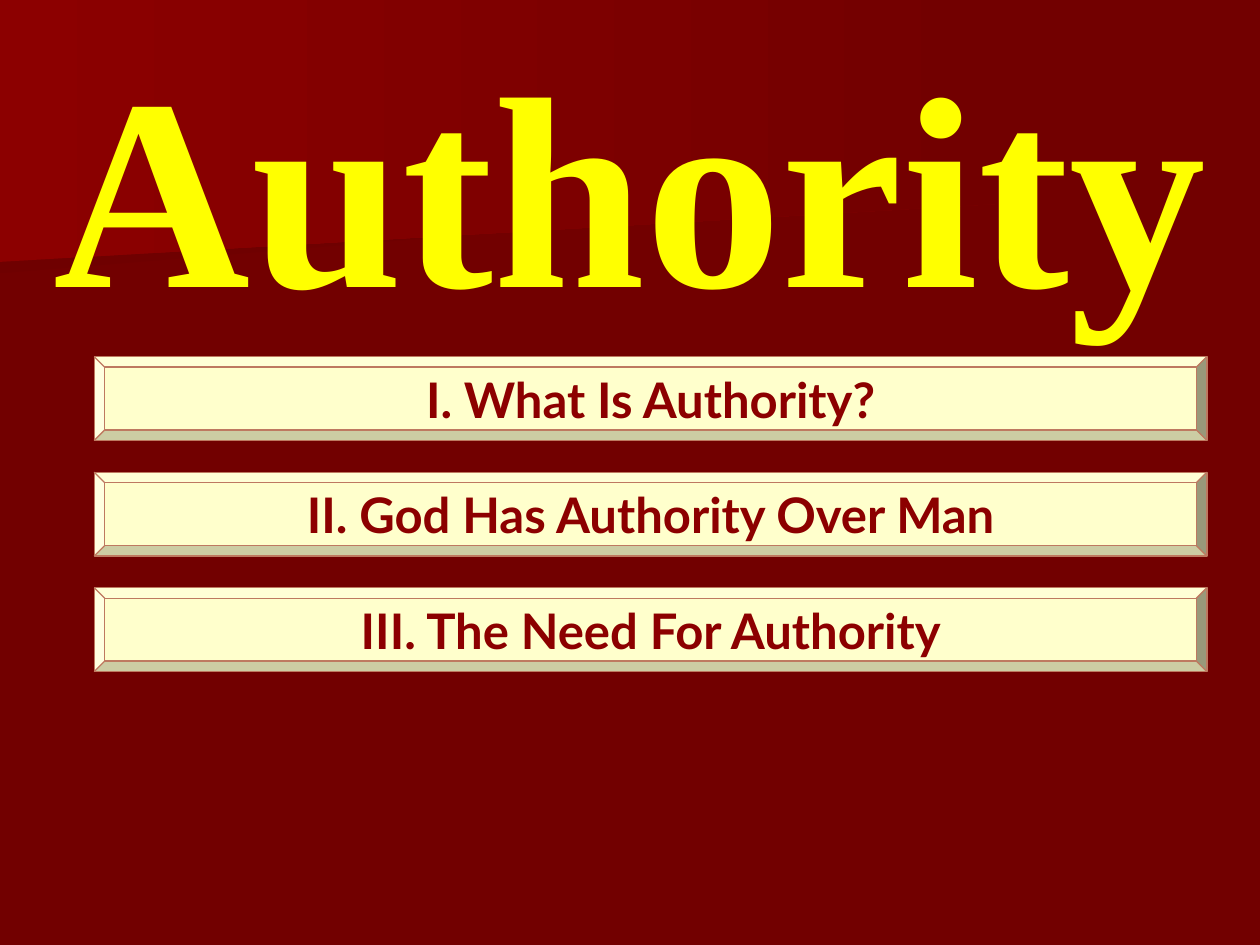
from pptx import Presentation
from pptx.dml.color import RGBColor
from pptx.enum.shapes import MSO_SHAPE
from pptx.enum.text import MSO_ANCHOR, MSO_AUTO_SIZE, PP_ALIGN
from pptx.util import Cm, Pt

BEVEL = MSO_SHAPE.BEVEL
TOP, MIDDLE = MSO_ANCHOR.TOP, MSO_ANCHOR.MIDDLE
NO_AUTOFIT = MSO_AUTO_SIZE.NONE
CENTER = PP_ALIGN.CENTER
TITLE_ONLY = 5

MAROON = RGBColor(0x72, 0x00, 0x00)
DARK_MAROON = RGBColor(0x6F, 0x00, 0x00)
RED = RGBColor(0x8C, 0x00, 0x00)
YELLOW = RGBColor(0xFF, 0xFF, 0x00)
CREAM = RGBColor(0xFF, 0xFF, 0xCC)
CLAY = RGBColor(0xBE, 0x79, 0x60)

# Start colour and corner points in cm, from back to front
BANDS = [
    (DARK_MAROON, [(19.76, 3.89), (0, 5.51), (0, 2.57), (19.79, 2.57)]),
    (RED, [(20.12, 4.11), (0, 5.28), (0, 0), (20.12, 0)]),
]
TOPICS = [
    "I. What Is Authority?",
    "II. God Has Authority Over Man",
    "III. The Need For Authority",
]
TOPIC_TOP, TOPIC_PITCH = 7.19, 2.33


def set_text(tf, text, frame_format, font_format, color):
    for name, value in frame_format.items():
        setattr(tf, name, value)
    p = tf.paragraphs[0]
    p.alignment = CENTER
    r = p.add_run()
    r.text = text
    for name, value in font_format.items():
        setattr(r.font, name, value)
    r.font.color.rgb = color


def add_band(s, start_color, points):
    """Add a background band, fading to the slide colour, behind the title."""
    corners = [(Cm(x), Cm(y)) for x, y in points]
    builder = s.shapes.build_freeform(*corners[0])
    builder.add_line_segments(corners[1:], close=True)
    sp = builder.convert_to_shape()
    sp.shadow.inherit = False
    sp.line.fill.background()
    sp.fill.gradient()
    sp.fill.gradient_angle = 0
    for stop, color in zip(sp.fill.gradient_stops, (start_color, MAROON)):
        stop.color.rgb = color
    s.shapes.title.element.addprevious(sp.element)


def format_title(title, text):
    box = {"left": Cm(0.64), "top": Cm(-0.43), "width": Cm(24.13), "height": Cm(6.86)}
    for name, value in box.items():
        setattr(title, name, value)
    frame_format = {"auto_size": NO_AUTOFIT, "vertical_anchor": TOP, "word_wrap": True,
                    "margin_top": Cm(0.73), "margin_bottom": 0}
    font_format = {"name": "Times New Roman", "size": Pt(156), "bold": True}
    set_text(title.text_frame, text, frame_format, font_format, YELLOW)


def add_topic(s, text, top):
    sp = s.shapes.add_shape(BEVEL, Cm(1.9), top, Cm(22.43), Cm(1.69))
    sp.adjustments[0] = 0.125
    sp.shadow.inherit = False
    sp.fill.solid()
    sp.fill.fore_color.rgb = CREAM
    sp.line.color.rgb = CLAY
    sp.line.width = Pt(0.75)
    frame_format = {"vertical_anchor": MIDDLE, "word_wrap": False}
    font_format = {"name": "Lato", "size": Pt(28), "bold": True}
    set_text(sp.text_frame, text, frame_format, font_format, RED)


def main():
    prs = Presentation()
    prs.slide_width, prs.slide_height = Cm(25.4), Cm(19.05)
    s = prs.slides.add_slide(prs.slide_layouts[TITLE_ONLY])
    s.background.fill.solid()
    s.background.fill.fore_color.rgb = MAROON

    for start_color, points in BANDS:
        add_band(s, start_color, points)
    format_title(s.shapes.title, "Authority")
    for i, topic in enumerate(TOPICS):
        add_topic(s, topic, Cm(TOPIC_TOP + i * TOPIC_PITCH))

    prs.save("out.pptx")


if __name__ == "__main__":
    main()
